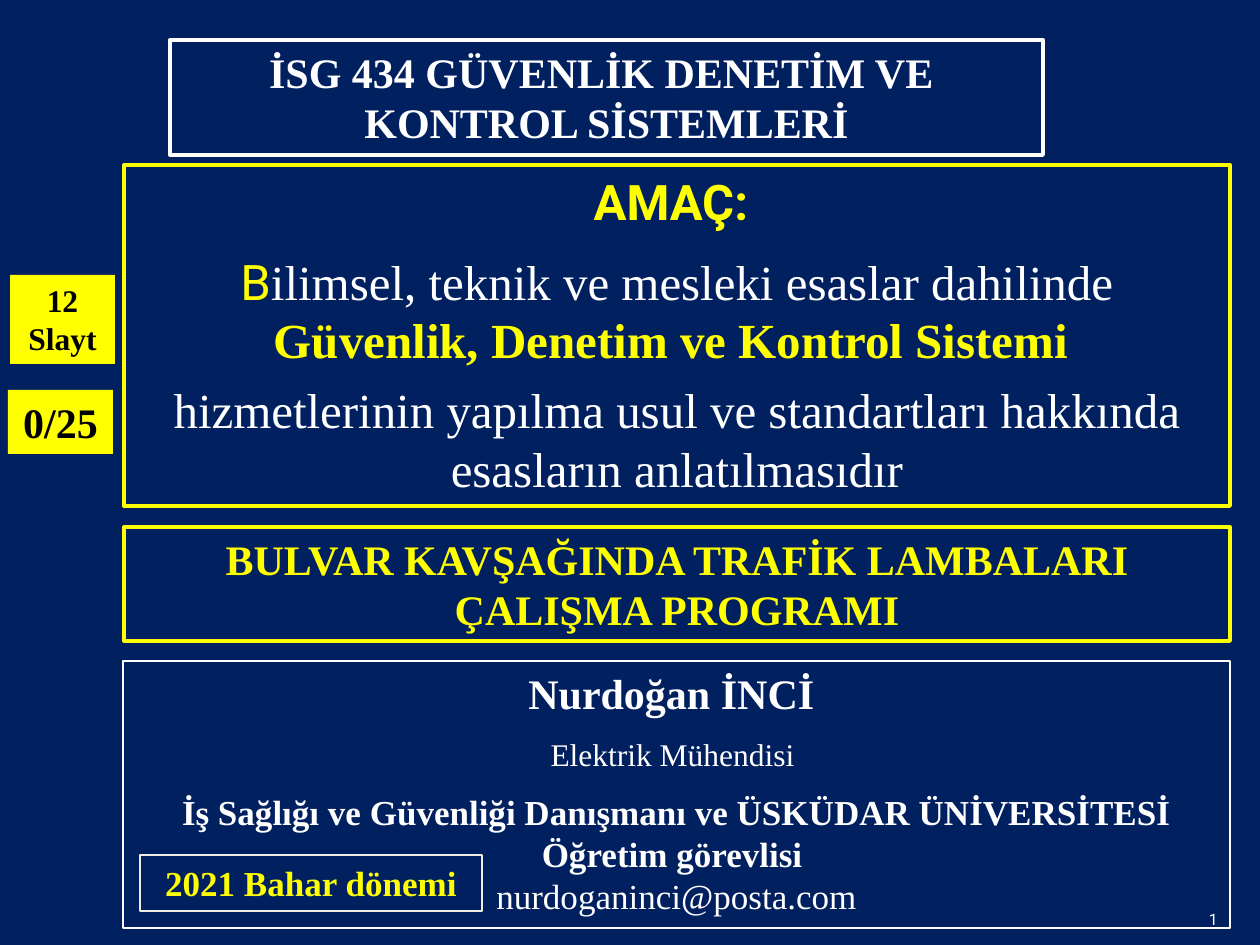
from dataclasses import dataclass

from pptx import Presentation
from pptx import util as u
from pptx.dml.color import RGBColor
from pptx.enum import shapes, text

SCALE = 914400 / 126


@dataclass(frozen=True)
class Theme:
    navy: str = "002060"
    white: str = "FFFFFF"
    yellow: str = "FFFF00"
    black: str = "000000"
    cream: str = "EFEBE5"
    serif: str = "Times New Roman"
    sans: str = "Roboto"
    number: int = 9
    label: int = 18
    body: int = 20
    title: int = 24
    purpose: int = 28
    thin: float = 0.75
    thick: float = 2.25


THEME = Theme()


@dataclass(frozen=True)
class Span:
    words: str
    size: int = THEME.title
    color: str = THEME.white
    font: str = THEME.serif
    bold: bool = True


@dataclass(frozen=True)
class Para:
    spans: tuple[Span, ...]
    before: int = 0
    after: int = 0


@dataclass(frozen=True)
class Panel:
    left: int
    top: int
    width: int
    height: int
    paras: tuple[Para, ...]
    line: str | None = None
    weight: float = THEME.thick
    fill: str | None = None


def px(length: int) -> u.Emu:
    return u.Emu(round(length * SCALE))


def rgb(color: str) -> RGBColor:
    return RGBColor.from_string(color)


def line_of(words: str, *, before: int = 0, after: int = 0, **style) -> Para:
    return Para((Span(words, **style),), before, after)


def write(frame, paras: tuple[Para, ...], *, align=text.PP_ALIGN.CENTER,
          anchor=text.MSO_ANCHOR.TOP) -> None:
    frame.word_wrap = True
    frame.auto_size = text.MSO_AUTO_SIZE.NONE
    frame.vertical_anchor = anchor
    for index, item in enumerate(paras):
        para = frame.add_paragraph() if index else frame.paragraphs[0]
        para.alignment = align
        para.space_before = u.Pt(item.before)
        para.space_after = u.Pt(item.after)
        for part in item.spans:
            span = para.add_run()
            span.text = part.words
            span.font.size = u.Pt(part.size)
            span.font.name = part.font
            span.font.bold = part.bold
            span.font.color.rgb = rgb(part.color)


def draw_panel(page, panel: Panel) -> None:
    box = page.shapes.add_shape(
        shapes.MSO_SHAPE.RECTANGLE,
        px(panel.left), px(panel.top), px(panel.width), px(panel.height))
    box.shadow.inherit = False
    if panel.fill:
        box.fill.solid()
        box.fill.fore_color.rgb = rgb(panel.fill)
    else:
        box.fill.background()
    if panel.line:
        box.line.color.rgb = rgb(panel.line)
        box.line.width = u.Pt(panel.weight)
    else:
        box.line.fill.background()
    write(box.text_frame, panel.paras)


def draw_page_number(page, number: str) -> None:
    box = page.shapes.add_textbox(px(1071), px(902), px(159), px(35))
    write(box.text_frame,
          (line_of(number, size=THEME.number, font=THEME.sans, bold=False),),
          align=text.PP_ALIGN.RIGHT, anchor=text.MSO_ANCHOR.MIDDLE)


COURSE = Panel(170, 40, 873, 115, (
    line_of("İSG 434 GÜVENLİK DENETİM VE "),
    line_of("KONTROL SİSTEMLERİ"),
), line=THEME.white)

PURPOSE = Panel(124, 165, 1106, 341, (
    line_of("AMAÇ: ", size=THEME.purpose, color=THEME.yellow,
            font=THEME.sans, after=6),
    Para((
        Span("B", THEME.purpose, THEME.yellow, THEME.sans, False),
        Span("ilimsel, teknik ve mesleki esaslar dahilinde ",
             THEME.purpose, bold=False),
        Span("Güvenlik, Denetim ve Kontrol Sistemi ",
             THEME.purpose, THEME.yellow),
    ), before=6),
    line_of("hizmetlerinin yapılma usul ve standartları hakkında "
            "esasların anlatılmasıdır",
            size=THEME.purpose, bold=False, before=6),
), line=THEME.yellow)

LECTURER = Panel(123, 661, 1107, 267, (
    line_of("Nurdoğan İNCİ "),
    line_of("Elektrik Mühendisi ", size=THEME.label, bold=False, before=10),
    line_of("İş Sağlığı ve Güvenliği Danışmanı ve ÜSKÜDAR ÜNİVERSİTESİ "
            "Öğretim görevlisi ", size=THEME.body, before=10),
    line_of("nurdoganinci@posta.com", size=THEME.body, bold=False),
), line=THEME.white, weight=THEME.thin)

SLIDE_COUNT = Panel(10, 275, 105, 89, tuple(
    line_of(words, size=THEME.label, color=THEME.black)
    for words in ("12", "Slayt")
), fill=THEME.yellow)

PROGRESS = Panel(8, 390, 105, 64, (
    line_of("0/25", color=THEME.black),
), fill=THEME.yellow)

TERM = Panel(140, 855, 342, 56, (
    line_of("2021 Bahar dönemi", size=THEME.body, color=THEME.yellow),
), line=THEME.cream, weight=THEME.thin)

TOPIC = Panel(124, 527, 1106, 114, (
    line_of("BULVAR KAVŞAĞINDA TRAFİK LAMBALARI ÇALIŞMA PROGRAMI",
            color=THEME.yellow),
), line=THEME.yellow)


def main() -> None:
    deck = Presentation()
    deck.slide_width, deck.slide_height = px(1260), px(945)
    page = deck.slides.add_slide(deck.slide_layouts[6])
    page.background.fill.solid()
    page.background.fill.fore_color.rgb = rgb(THEME.navy)
    for panel in (COURSE, PURPOSE, LECTURER):
        draw_panel(page, panel)
    draw_page_number(page, "1")
    for panel in (SLIDE_COUNT, PROGRESS, TERM, TOPIC):
        draw_panel(page, panel)
    deck.save("out.pptx")


if __name__ == "__main__":
    main()
